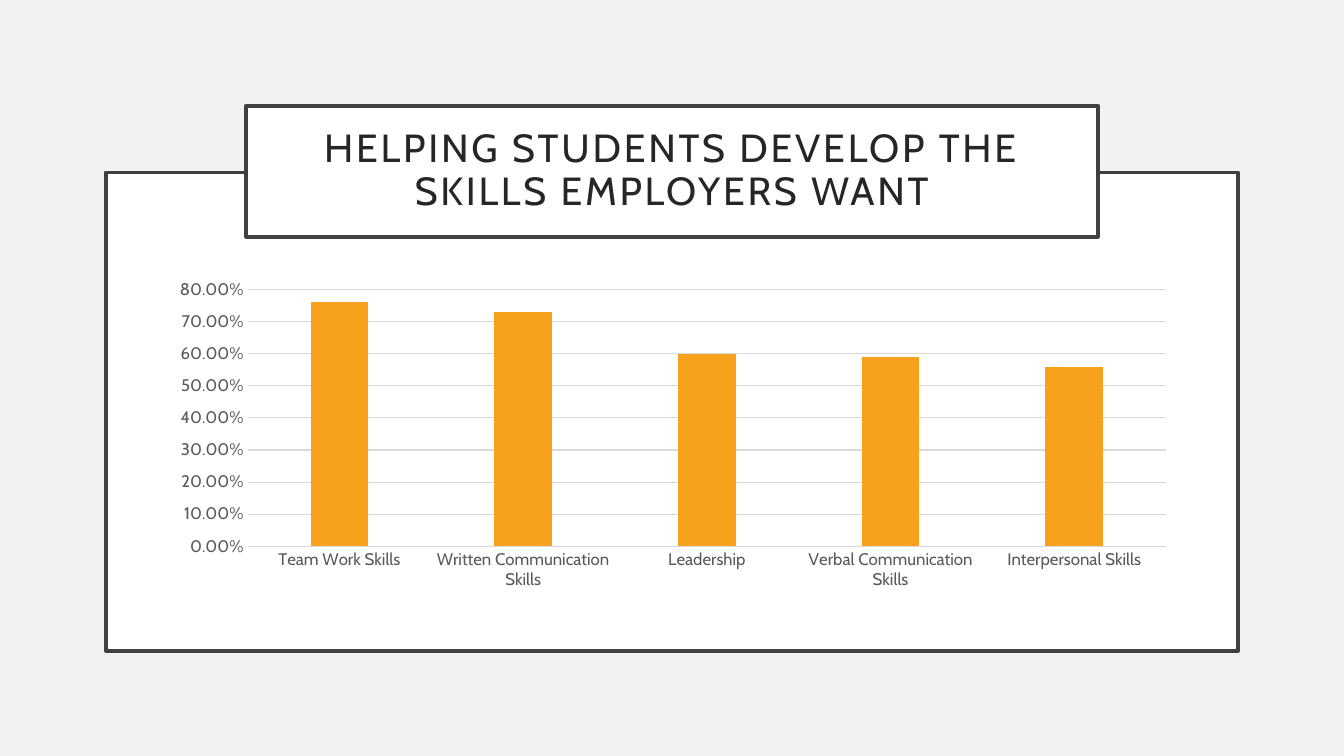
"""Build a slide with a framed column chart of the skills employers want."""
from pptx import Presentation
from pptx.chart.data import CategoryChartData
from pptx.dml.color import RGBColor
from pptx.enum.chart import XL_CHART_TYPE, XL_TICK_MARK
from pptx.enum.shapes import MSO_SHAPE
from pptx.enum.text import MSO_ANCHOR, PP_ALIGN
from pptx.util import Inches, Pt

TITLE = "HELPING STUDENTS DEVELOP THE SKILLS EMPLOYERS WANT"
SKILLS = {
    "Team Work Skills": 0.76,
    "Written Communication Skills": 0.73,
    "Leadership": 0.6,
    "Verbal Communication Skills": 0.59,
    "Interpersonal Skills": 0.56,
}
FONT = "Cabin"
COLORS = {
    "background": "F2F2F2",
    "panel": "FFFFFF",
    "border": "404040",
    "title": "262626",
    "label": "595959",
    "grid": "D9D9D9",
    "bar": "F6A21D",
}
PANEL_BOX = (1.05, 1.71, 11.23, 4.75)
TITLE_BOX = (2.44, 1.05, 8.45, 1.3)
CHART_BOX = (1.58, 2.71, 10.19, 3.21)


def color(name):
    """Return the named colour."""
    return RGBColor.from_string(COLORS[name])


def paint(fill, name):
    """Make a fill solid in the named colour."""
    fill.solid()
    fill.fore_color.rgb = color(name)


def style_font(font, size, name):
    """Set typeface, size and colour."""
    font.name = FONT
    font.size = Pt(size)
    font.color.rgb = color(name)


def style_line(line, width, name):
    """Set line width and colour."""
    line.width = Pt(width)
    line.color.rgb = color(name)


def add_panel(slide, box):
    """Add a white rectangle with a dark border."""
    shape = slide.shapes.add_shape(MSO_SHAPE.RECTANGLE, *map(Inches, box))
    shape.shadow.inherit = False
    paint(shape.fill, "panel")
    style_line(shape.line, 2.5, "border")
    return shape


def add_title(slide):
    """Add the bordered title."""
    text_frame = add_panel(slide, TITLE_BOX).text_frame
    text_frame.text = TITLE
    text_frame.word_wrap = True
    text_frame.vertical_anchor = MSO_ANCHOR.MIDDLE
    for side in ("left", "top", "right", "bottom"):
        setattr(text_frame, f"margin_{side}", Inches(0.2))
    paragraph = text_frame.paragraphs[0]
    paragraph.alignment = PP_ALIGN.CENTER
    paragraph.line_spacing = 0.9
    font = paragraph.runs[0].font
    style_font(font, 28, "title")
    paragraph.runs[0]._r.get_or_add_rPr().set("spc", "200")


def add_skills_chart(slide):
    """Add the column chart of skills."""
    data = CategoryChartData(number_format="0.00%")
    data.categories = list(SKILLS)
    data.add_series("Series 1", list(SKILLS.values()))
    chart = slide.shapes.add_chart(
        XL_CHART_TYPE.COLUMN_CLUSTERED, *map(Inches, CHART_BOX), data
    ).chart
    chart.has_legend = False
    chart.has_title = False
    chart.font.name = FONT
    chart.font.size = Pt(10)

    plot = chart.plots[0]
    plot.gap_width = 219
    plot.overlap = -27
    plot.vary_by_categories = False
    paint(plot.series[0].format.fill, "bar")

    for axis in (chart.category_axis, chart.value_axis):
        axis.major_tick_mark = XL_TICK_MARK.NONE
        axis.minor_tick_mark = XL_TICK_MARK.NONE
        style_font(axis.tick_labels.font, 12, "label")
    style_line(chart.category_axis.format.line, 0.75, "grid")

    value_axis = chart.value_axis
    value_axis.minimum_scale = 0
    value_axis.maximum_scale = 0.8
    value_axis.major_unit = 0.1
    value_axis.tick_labels.number_format = "0.00%"
    value_axis.tick_labels.number_format_is_linked = False
    value_axis.format.line.fill.background()
    style_line(value_axis.major_gridlines.format.line, 0.75, "grid")


def main():
    """Build and save the presentation."""
    presentation = Presentation()
    presentation.slide_width = Inches(13.33)
    presentation.slide_height = Inches(7.5)
    slide = presentation.slides.add_slide(presentation.slide_layouts[6])
    paint(slide.background.fill, "background")
    add_panel(slide, PANEL_BOX)
    add_title(slide)
    add_skills_chart(slide)
    presentation.save("out.pptx")


if __name__ == "__main__":
    main()
